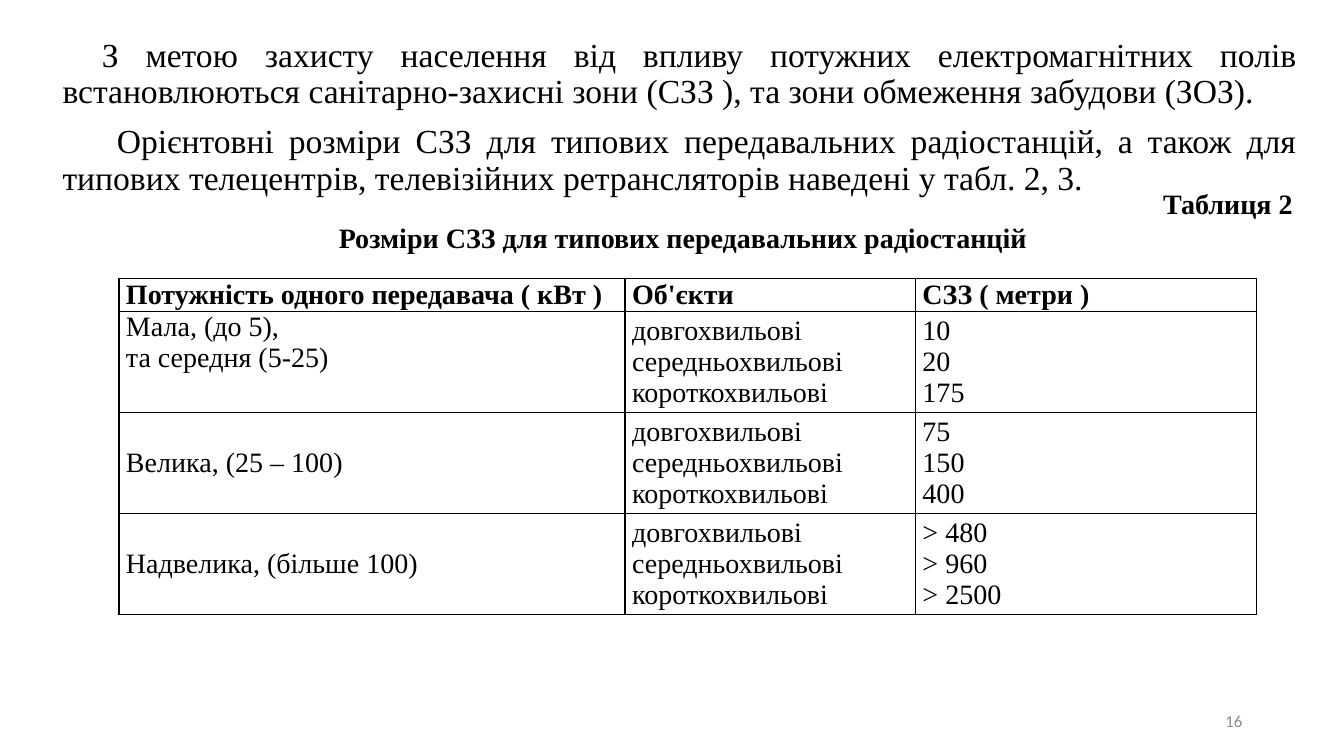
from lxml import etree
from pptx import Presentation
from pptx import util as u
from pptx.dml.color import RGBColor
from pptx.enum import text
from pptx.oxml import ns

SERIF = "Times New Roman"
BLACK = "000000"
WAVES = "довгохвильові\nсередньохвильові\nкороткохвильові"
INTRO = [
    "З метою захисту населення від впливу потужних електромагнітних полів "
    "встановлюються санітарно-захисні зони (СЗЗ ), та зони обмеження забудови (ЗОЗ).",
    " Орієнтовні розміри СЗЗ для типових передавальних радіостанцій, а також для "
    "типових телецентрів, телевізійних ретрансляторів наведені у табл. 2, 3.",
]
ZONES = [
    ("Потужність одного передавача ( кВт )", "Об'єкти", "СЗЗ ( метри )"),
    ("Мала, (до 5),\nта середня (5-25)", WAVES, "10\n20\n175"),
    ("Велика, (25 – 100)", WAVES, "75\n150\n400"),
    ("Надвелика, (більше 100)", WAVES, "> 480\n> 960\n> 2500"),
]
COLUMN_WIDTHS = (5.02, 2.88, 3.38)
ROW_HEIGHTS = (0.33, 1, 1, 1)


def colour(value):
    return RGBColor.from_string(value)


def add_span(para, words, size, bold=False, font=SERIF, shade=BLACK):
    for number, line in enumerate(words.split("\n")):
        if number:
            para.add_line_break()
        span = para.add_run()
        span.text = line
        span.font.size = u.Pt(size)
        span.font.bold = bold
        span.font.name = font
        span.font.color.rgb = colour(shade)


def next_para(frame, index, align):
    para = frame.add_paragraph() if index else frame.paragraphs[0]
    para.alignment = align
    return para


def place(shape, left, top, width, height):
    shape.left, shape.top = u.Inches(left), u.Inches(top)
    shape.width, shape.height = u.Inches(width), u.Inches(height)


def fill_intro(body):
    place(body, 0.52, 0.33, 12.44, 4.76)
    frame = body.text_frame
    frame.auto_size = text.MSO_AUTO_SIZE.NONE
    for index, words in enumerate(INTRO):
        para = next_para(frame, index, text.PP_ALIGN.JUSTIFY)
        para.line_spacing = 0.9
        para.space_before = u.Pt(10)
        settings = para._p.get_or_add_pPr()
        settings.set("marL", "0")
        settings.set("indent", str(u.Inches(0.39)))
        etree.SubElement(settings, ns.qn("a:buNone"))
        add_span(para, words, 24)


def add_box(page, left, top, width, height):
    box = page.shapes.add_textbox(*map(u.Inches, (left, top, width, height)))
    frame = box.text_frame
    frame.word_wrap = True
    frame.vertical_anchor = text.MSO_ANCHOR.MIDDLE
    return frame


def add_caption(page):
    frame = add_box(page, 0.56, 1.8, 12.36, 0.77)
    add_span(next_para(frame, 0, text.PP_ALIGN.RIGHT), "Таблиця 2", 20, True)
    heading = next_para(frame, 1, text.PP_ALIGN.CENTER)
    add_span(heading, " ", 20)
    add_span(heading, "Розміри СЗЗ для типових передавальних радіостанцій", 20, True)


def add_page_number(page):
    frame = add_box(page, 9.42, 6.95, 3, 0.4)
    para = next_para(frame, 0, text.PP_ALIGN.RIGHT)
    add_span(para, "16", 12, font="Calibri", shade="8C8C8C")


def set_borders(cell):
    settings = cell._tc.get_or_add_tcPr()
    for index, side in enumerate(("lnL", "lnR", "lnT", "lnB")):
        line = etree.Element(ns.qn(f"a:{side}"), w=str(u.Pt(1)))
        fill = etree.SubElement(line, ns.qn("a:solidFill"))
        etree.SubElement(fill, ns.qn("a:srgbClr"), val=BLACK)
        settings.insert(index, line)


def fill_cell(cell, words, bold, anchor):
    cell.fill.background()
    cell.margin_left = cell.margin_right = u.Inches(0.07)
    cell.margin_top = cell.margin_bottom = 0
    cell.vertical_anchor = anchor
    add_span(cell.text_frame.paragraphs[0], words, 20, bold)
    set_borders(cell)


def add_zone_table(page):
    place_and_size = map(u.Inches, (1.18, 2.76, sum(COLUMN_WIDTHS), sum(ROW_HEIGHTS)))
    table = page.shapes.add_table(len(ZONES), len(COLUMN_WIDTHS), *place_and_size).table
    table.horz_banding = False
    for column, width in zip(table.columns, COLUMN_WIDTHS):
        column.width = u.Inches(width)
    for r, (row, height) in enumerate(zip(ZONES, ROW_HEIGHTS)):
        table.rows[r].height = u.Inches(height)
        for c, words in enumerate(row):
            at_top = (r, c) == (1, 0)
            anchor = text.MSO_ANCHOR.TOP if at_top else text.MSO_ANCHOR.MIDDLE
            fill_cell(table.cell(r, c), words, r == 0, anchor)


def main():
    deck = Presentation()
    deck.slide_width, deck.slide_height = u.Inches(13.33), u.Inches(7.5)
    page = deck.slides.add_slide(deck.slide_layouts[1])
    title = page.shapes.title.element
    title.getparent().remove(title)
    fill_intro(page.placeholders[1])
    add_page_number(page)
    add_caption(page)
    add_zone_table(page)
    deck.save("out.pptx")


if __name__ == "__main__":
    main()
